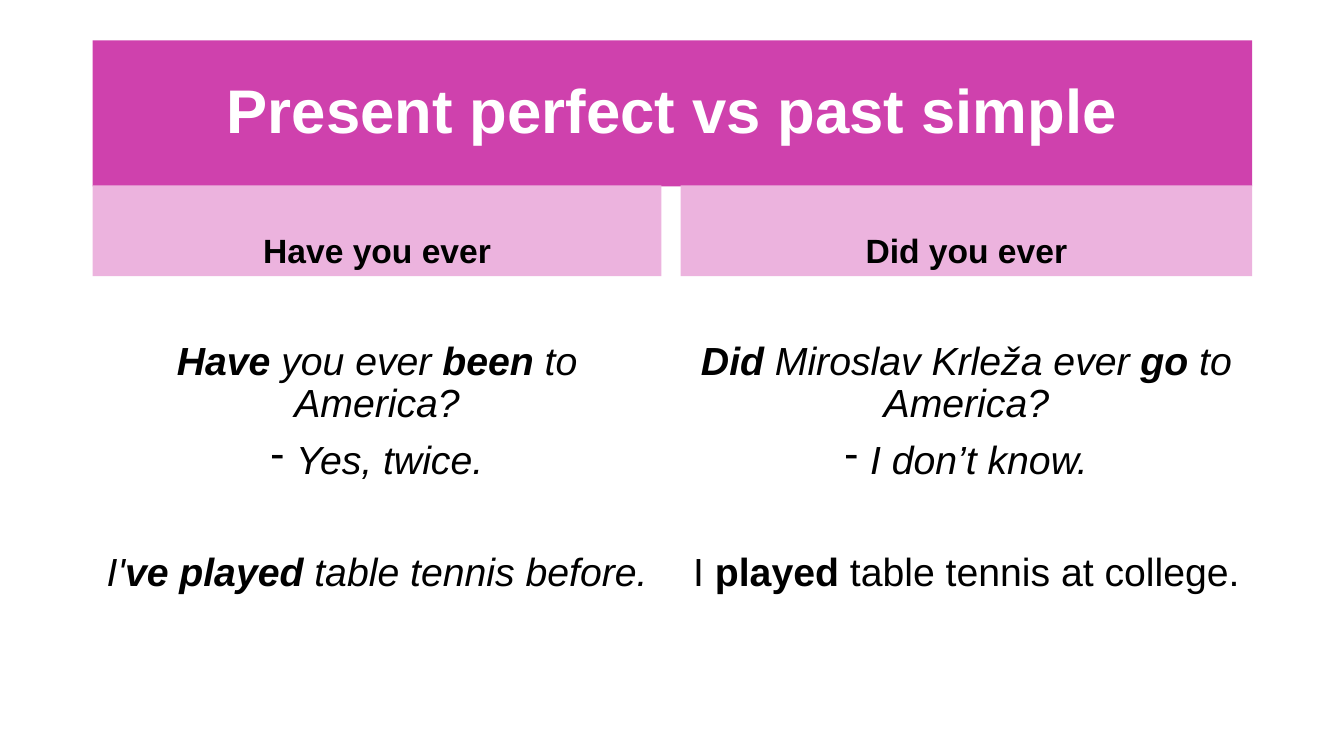
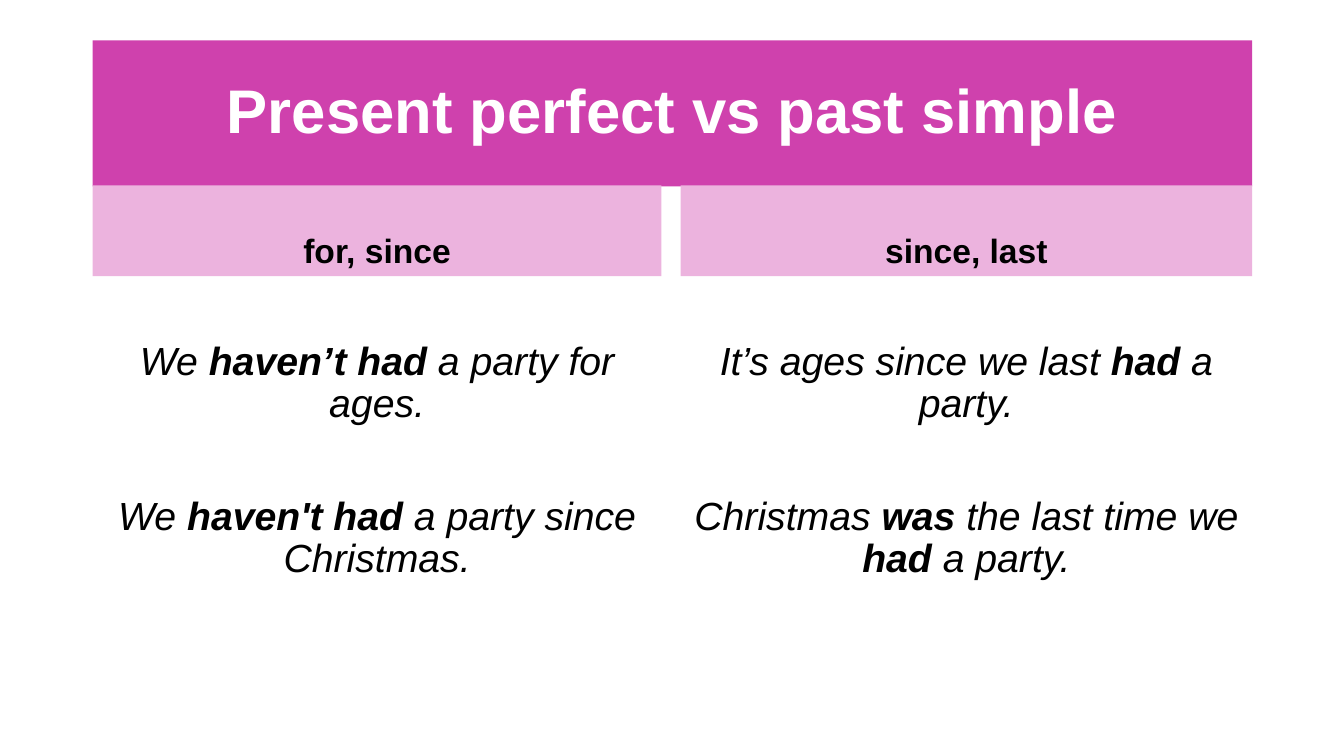
from dataclasses import dataclass

from lxml import etree
from pptx import Presentation
from pptx.dml.color import RGBColor
from pptx.enum.shapes import MSO_SHAPE
from pptx.enum.text import MSO_ANCHOR, PP_ALIGN
from pptx.oxml.ns import qn
from pptx.util import Inches, Pt

RECT = MSO_SHAPE.RECTANGLE
CENTER = PP_ALIGN.CENTER
TOP, MIDDLE, BOTTOM = MSO_ANCHOR.TOP, MSO_ANCHOR.MIDDLE, MSO_ANCHOR.BOTTOM


@dataclass(frozen=True)
class Theme:
    font: str = "Arial"
    band: RGBColor = RGBColor(0xCF, 0x41, 0xAD)
    header: RGBColor = RGBColor(0xEC, 0xB3, 0xDE)
    light: RGBColor = RGBColor(0xFF, 0xFF, 0xFF)
    dark: RGBColor = RGBColor(0, 0, 0)
    title_size: Pt = Pt(44)
    header_size: Pt = Pt(24)
    body_size: Pt = Pt(28)
    line: float = 0.9
    near: Pt = Pt(10)
    far: Pt = Pt(50)


THEME = Theme()
TITLE = "Present perfect vs past simple"

# Each example: style, then text pieces that alternate between regular and bold.
SLIDES = [
    [
        ("Have you ever", [
            ("example", ["", "Have", " you ever ", "been", " to America?"]),
            ("reply", ["Yes, twice."]),
            ("example", ["I'", "ve played ", "table tennis before."]),
        ]),
        ("Did you ever", [
            ("example", ["", "Did", " Miroslav Krleža ever ", "go", " to America?"]),
            ("reply", ["I don’t know."]),
            ("upright", ["I ", "played", " table tennis at college."]),
        ]),
    ],
    [
        ("for, since", [
            ("example", ["We ", "haven’t had ", "a party for ages."]),
            ("example", ["We ", "haven't had ", "a party since Christmas."]),
        ]),
        ("since, last", [
            ("example", ["It’s ages since we last ", "had", " a party."]),
            ("example", ["Christmas ", "was", " the last time we ", "had", " a party."]),
        ]),
    ],
]

LEFT, WIDTH = 0.92, 11.5
COLUMNS = [(LEFT, 5.64), (6.75, 5.67)]
TITLE_TOP, TITLE_H = 0.4, 1.45
HEADER_TOP, HEADER_H = 1.84, 0.9
BODY_TOP, BODY_H, BODY_INSET = 2.74, 4.03, 0.65


def style_run(r, size, color, bold, italic=False):
    r.font.name = THEME.font
    r.font.size = size
    r.font.color.rgb = color
    r.font.bold = bold
    r.font.italic = italic


def style_paragraph(p):
    p.alignment = CENTER
    p.line_spacing = THEME.line


def add_dash(p):
    pPr = p._p.get_or_add_pPr()
    pPr.set("marL", str(Inches(0.25)))
    pPr.set("indent", str(-Inches(0.25)))
    etree.SubElement(pPr, qn("a:buFontTx"))
    etree.SubElement(pPr, qn("a:buChar")).set("char", "-")


def add_band(s, box, fill, text, size, color, anchor):
    sp = s.shapes.add_shape(RECT, *map(Inches, box))
    sp.shadow.inherit = False
    sp.fill.solid()
    sp.fill.fore_color.rgb = fill
    sp.line.fill.background()
    tf = sp.text_frame
    tf.word_wrap = True
    tf.vertical_anchor = anchor
    tf.text = text
    p = tf.paragraphs[0]
    style_paragraph(p)
    style_run(p.runs[0], size, color, True)


def add_examples(s, box, examples):
    tf = s.shapes.add_textbox(*map(Inches, box)).text_frame
    tf.word_wrap = True
    tf.vertical_anchor = TOP
    tf.margin_top = Inches(BODY_INSET)
    for i, (kind, pieces) in enumerate(examples):
        p = tf.add_paragraph() if i else tf.paragraphs[0]
        style_paragraph(p)
        if i:
            p.space_before = THEME.near if kind == "reply" else THEME.far
        if kind == "reply":
            add_dash(p)
        for j, piece in enumerate(pieces):
            if piece:
                r = p.add_run()
                r.text = piece
                style_run(r, THEME.body_size, THEME.dark, j % 2 == 1, kind != "upright")


def add_comparison(prs, columns):
    s = prs.slides.add_slide(prs.slide_layouts[6])
    add_band(s, (LEFT, TITLE_TOP, WIDTH, TITLE_H), THEME.band,
             TITLE, THEME.title_size, THEME.light, MIDDLE)
    for (x, w), (heading, examples) in zip(COLUMNS, columns):
        add_band(s, (x, HEADER_TOP, w, HEADER_H), THEME.header,
                 heading, THEME.header_size, THEME.dark, BOTTOM)
        add_examples(s, (x, BODY_TOP, w, BODY_H), examples)


def main():
    prs = Presentation()
    prs.slide_width, prs.slide_height = Inches(13.33), Inches(7.5)
    for columns in SLIDES:
        add_comparison(prs, columns)
    prs.save("out.pptx")


if __name__ == "__main__":
    main()
